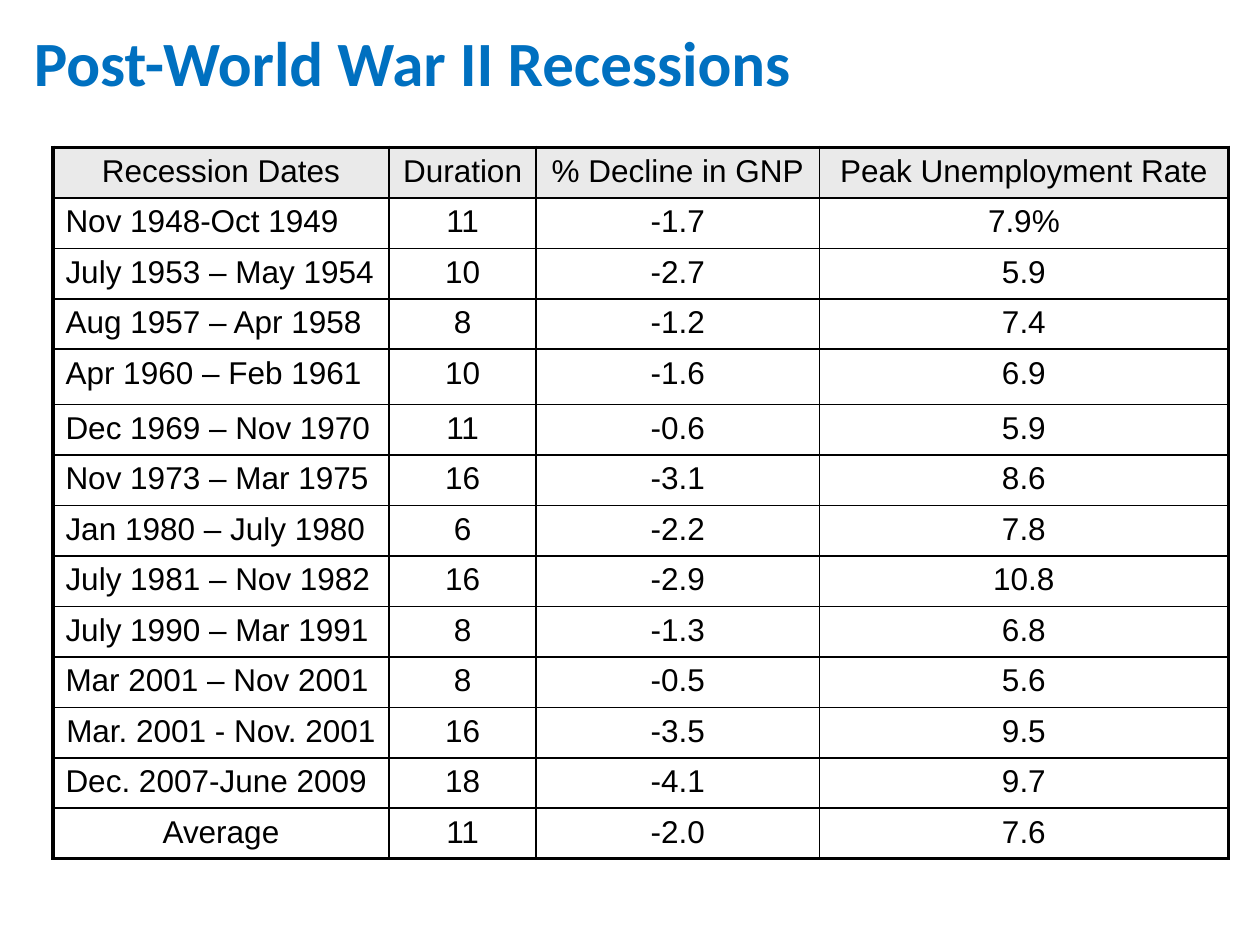
from dataclasses import dataclass

from lxml import etree
from pptx import Presentation
from pptx import util as u
from pptx.dml import color
from pptx.enum import text
from pptx.oxml import ns


@dataclass(frozen=True)
class Theme:
    title_color: str = "0070C0"
    ink: str = "000000"
    header_fill: str = "EAEAEA"
    title_font: str = "Calibri"
    body_font: str = "Arial"
    title_size: float = 36
    body_size: float = 18
    grid_line: float = 1
    frame_line: float = 2.25


THEME = Theme()
LEFT, CENTER = text.PP_ALIGN.LEFT, text.PP_ALIGN.CENTER

HEADINGS = ("Recession Dates", "Duration", "% Decline in GNP", "Peak Unemployment Rate")
RECESSIONS = (
    ("Nov 1948-Oct 1949", "11", "-1.7", "7.9%"),
    ("July 1953 – May 1954", "10", "-2.7", "5.9"),
    ("Aug 1957 – Apr 1958", "8", "-1.2", "7.4"),
    ("Apr 1960 – Feb 1961", "10", "-1.6", "6.9"),
    ("Dec 1969 – Nov 1970", "11", "-0.6", "5.9"),
    ("Nov 1973 – Mar 1975", "16", "-3.1", "8.6"),
    ("Jan 1980 – July 1980", "6", "-2.2", "7.8"),
    ("July 1981 – Nov 1982", "16", "-2.9", "10.8"),
    ("July 1990 – Mar 1991", "8", "-1.3", "6.8"),
    ("Mar 2001 – Nov 2001", "8", "-0.5", "5.6"),
    ("Mar. 2001 - Nov. 2001", "16", "-3.5", "9.5"),
    ("Dec. 2007-June 2009", "18", "-4.1", "9.7"),
)
AVERAGE = ("Average", "11", "-2.0", "7.6")
CENTERED_DATES = (HEADINGS[0], "Mar. 2001 - Nov. 2001", AVERAGE[0])
COLUMN_WIDTHS = (2.67, 1.17, 2.25, 3.25)
ROW_HEIGHT = 0.4
TALL_ROWS = {"Apr 1960 – Feb 1961": 0.44}


def write(frame, words, font=THEME.body_font, size=THEME.body_size,
          ink=THEME.ink, bold=False, align=LEFT, spacing=1.0):
    paragraph = frame.paragraphs[0]
    paragraph.alignment = align
    paragraph.line_spacing = spacing
    run = paragraph.add_run()
    run.text = words
    run.font.name = font
    run.font.size = u.Pt(size)
    run.font.bold = bold
    run.font.color.rgb = color.RGBColor.from_string(ink)


def add_title(slide, left, top, width, height):
    frame = slide.shapes.add_textbox(left, top, width, height).text_frame
    frame.word_wrap = True
    frame.vertical_anchor = text.MSO_ANCHOR.MIDDLE
    write(frame, "Post-World War II Recessions", font=THEME.title_font,
          size=THEME.title_size, ink=THEME.title_color, bold=True, spacing=0.8)


def set_borders(cell, on_frame):
    properties = cell._tc.get_or_add_tcPr()
    for side in "LRTB":
        width = THEME.frame_line if on_frame[side] else THEME.grid_line
        line = etree.SubElement(properties, ns.qn(f"a:ln{side}"), w=str(u.Pt(width)))
        fill = etree.SubElement(line, ns.qn("a:solidFill"))
        etree.SubElement(fill, ns.qn("a:srgbClr"), val=THEME.ink)


def add_recession_table(slide, left, top, width, height):
    rows = (HEADINGS, *RECESSIONS, AVERAGE)
    last_row, last_column = len(rows) - 1, len(HEADINGS) - 1
    table = slide.shapes.add_table(len(rows), len(HEADINGS), left, top, width, height).table
    table.first_row = table.horz_banding = False
    for column, share in zip(table.columns, COLUMN_WIDTHS):
        column.width = int(width * share / sum(COLUMN_WIDTHS))
    for r, entries in enumerate(rows):
        table.rows[r].height = u.Inches(TALL_ROWS.get(entries[0], ROW_HEIGHT))
        for c, entry in enumerate(entries):
            cell = table.cell(r, c)
            set_borders(cell, {"L": c == 0, "R": c == last_column,
                               "T": r == 0, "B": r == last_row})
            if r == 0:
                cell.fill.solid()
                cell.fill.fore_color.rgb = color.RGBColor.from_string(THEME.header_fill)
            else:
                cell.fill.background()
            centered = c > 0 or entry in CENTERED_DATES
            write(cell.text_frame, entry, align=CENTER if centered else LEFT)


def main():
    deck = Presentation()
    deck.slide_width, deck.slide_height = u.Inches(10), u.Inches(7.5)
    slide = deck.slides.add_slide(deck.slide_layouts[6])
    add_title(slide, u.Inches(0.17), u.Inches(0.24), u.Inches(9.5), u.Inches(0.6))
    add_recession_table(slide, u.Inches(0.42), u.Inches(1.17), u.Inches(9.33), u.Inches(5.64))
    deck.save("out.pptx")


if __name__ == "__main__":
    main()
